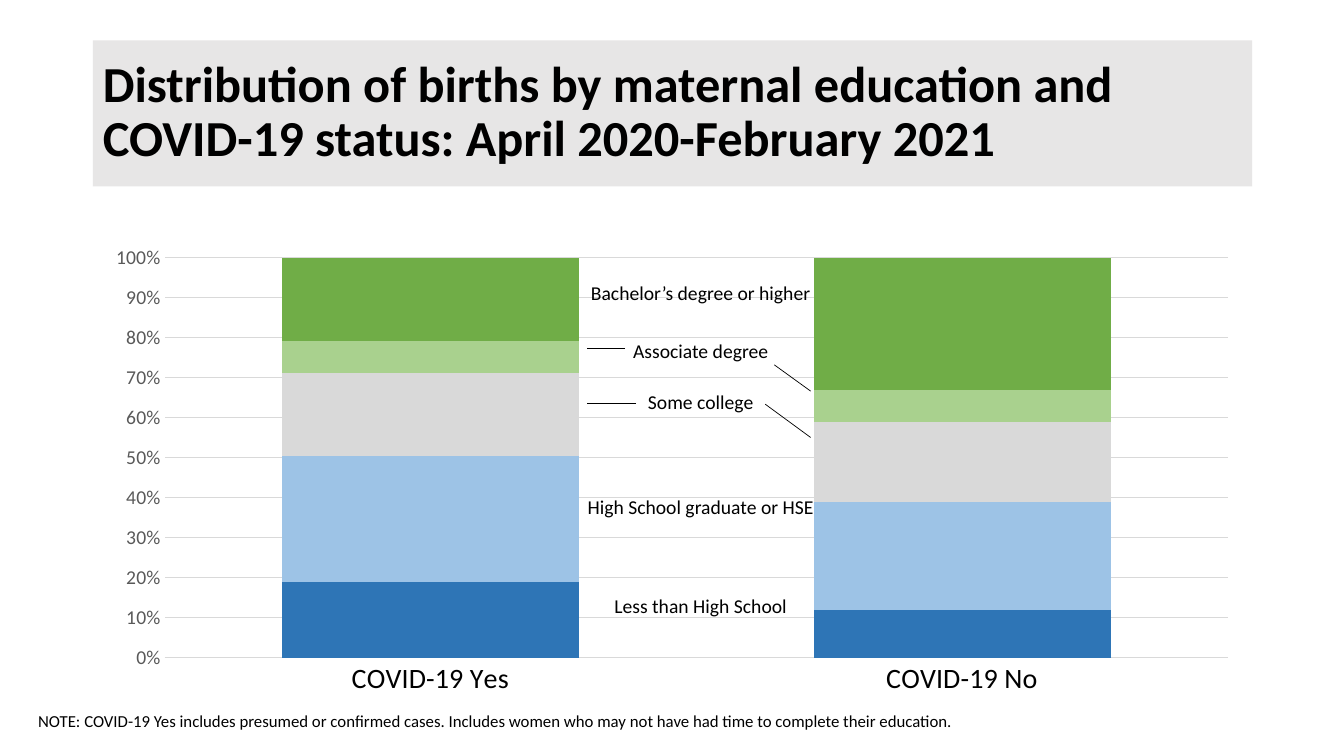
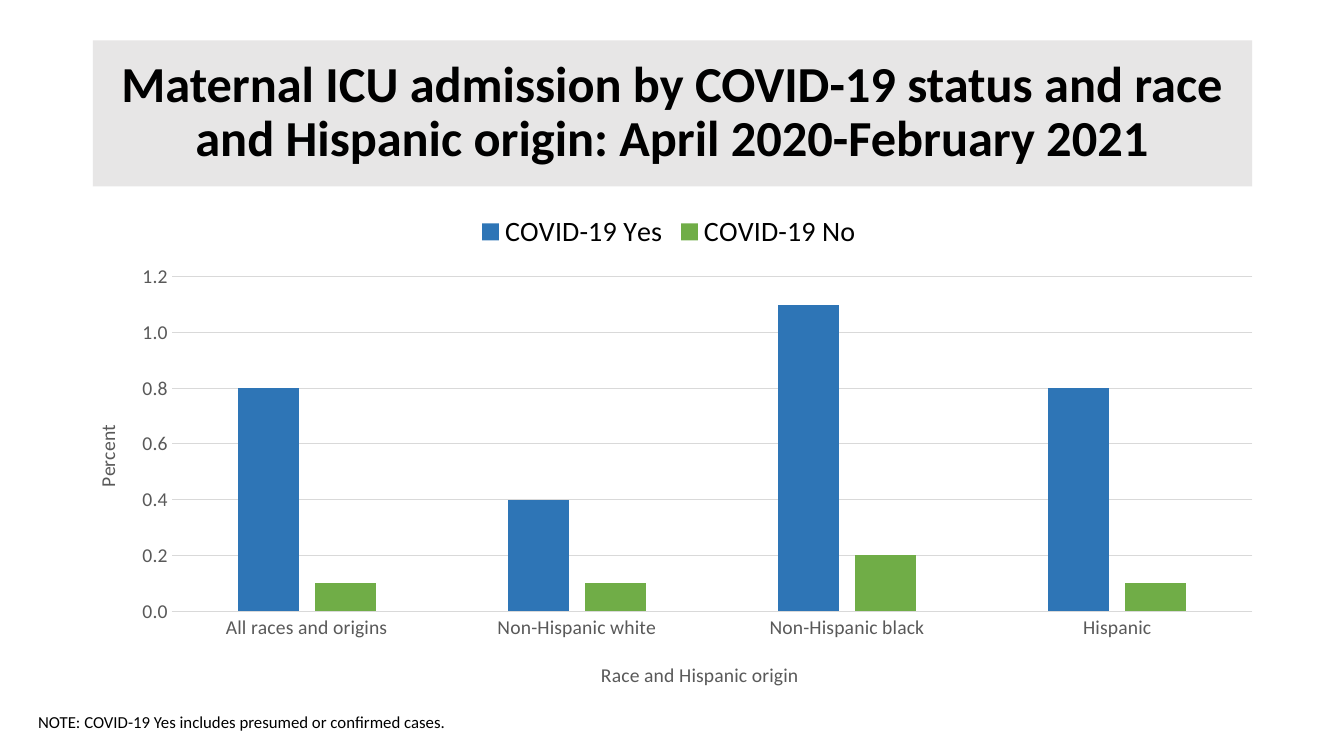
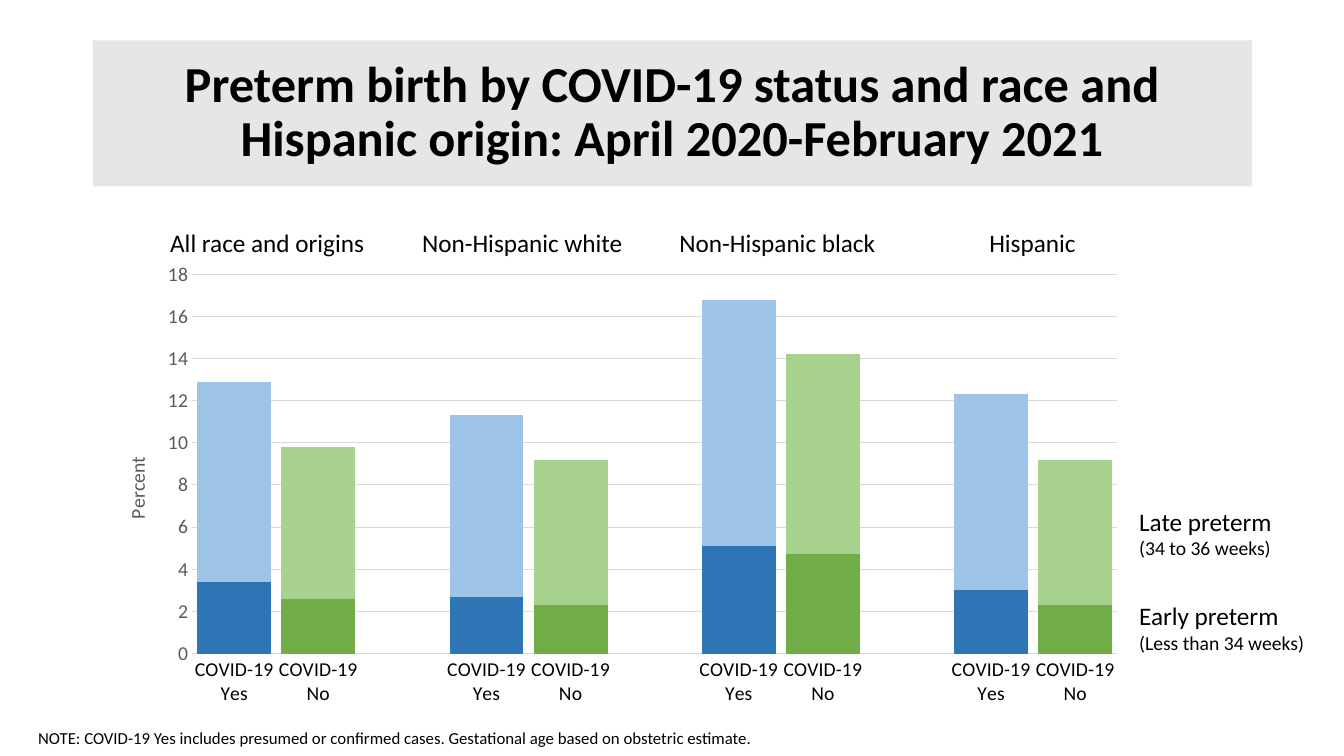
from lxml import etree
from pptx import Presentation
from pptx.chart.data import CategoryChartData
from pptx.dml.color import RGBColor
from pptx.enum.chart import XL_CHART_TYPE as ChartType, XL_LEGEND_POSITION as LegendPos
from pptx.enum.chart import XL_TICK_MARK as TickMark
from pptx.enum.shapes import MSO_CONNECTOR
from pptx.enum.text import MSO_ANCHOR, MSO_AUTO_SIZE as AutoSize, PP_ALIGN
from pptx.oxml import parse_xml
from pptx.oxml.ns import nsdecls, qn
from pptx.util import Inches, Pt

FONT = "Calibri"
BLACK = RGBColor(0x00, 0x00, 0x00)
AXIS_GREY = RGBColor(0x59, 0x59, 0x59)
RULE_GREY = RGBColor(0xD9, 0xD9, 0xD9)
BAND_GREY = RGBColor(0xE7, 0xE6, 0xE6)
BLUE = RGBColor(0x2E, 0x75, 0xB6)
LIGHT_BLUE = RGBColor(0x9D, 0xC3, 0xE6)
GREEN = RGBColor(0x70, 0xAD, 0x47)
LIGHT_GREEN = RGBColor(0xA9, 0xD1, 0x8E)

TITLE_ONLY = 5
LINE_HEIGHT = 1.22  # of the font size


def set_font(font, size, color=BLACK, bold=False):
    font.name = FONT
    font.size = Pt(size)
    font.bold = bold
    font.color.rgb = color


# Shared slide parts
def add_slide(prs, heading, align=PP_ALIGN.CENTER):
    slide = prs.slides.add_slide(prs.slide_layouts[TITLE_ONLY])
    title = slide.shapes.title
    title.left, title.top = Inches(0.92), Inches(0.4)
    title.width, title.height = Inches(11.5), Inches(1.45)
    title.fill.solid()
    title.fill.fore_color.rgb = BAND_GREY
    frame = title.text_frame
    frame.text = heading
    frame.auto_size = AutoSize.NONE
    frame.vertical_anchor = MSO_ANCHOR.MIDDLE
    paragraph = frame.paragraphs[0]
    paragraph.alignment = align
    paragraph.line_spacing = 0.9
    set_font(paragraph.runs[0].font, 36, bold=True)
    return slide


def add_text(shapes, left, top, width, height, lines, align=PP_ALIGN.LEFT):
    """Each line is (text, size, space before in points)."""
    box = shapes.add_textbox(Inches(left), Inches(top), Inches(width), Inches(height))
    frame = box.text_frame
    frame.word_wrap = True
    frame.auto_size = AutoSize.SHAPE_TO_FIT_TEXT
    for index, (text, size, gap) in enumerate(lines):
        paragraph = frame.paragraphs[0] if index == 0 else frame.add_paragraph()
        paragraph.text = text
        paragraph.alignment = align
        paragraph.space_before = Pt(gap)
        set_font(paragraph.runs[0].font, size)


def add_note(slide, text, top):
    add_text(slide.shapes, 0.28, top, 11.3, 0.3, [(text, 12, 0)])


def add_leader(slide, x1, y1, x2, y2):
    leader = slide.shapes.add_connector(
        MSO_CONNECTOR.STRAIGHT, Inches(x1), Inches(y1), Inches(x2), Inches(y2))
    leader.line.color.rgb = BLACK
    leader.line.width = Pt(0.5)
    etree.SubElement(leader._element.spPr, qn("a:effectLst"))


# Charts
def manual_layout(x, y, size=None):
    """Layout in fractions of the chart; a size marks the inner plot area."""
    parts = [("xMode", "edge"), ("yMode", "edge"), ("x", x), ("y", y)]
    if size:
        parts = [("layoutTarget", "inner")] + parts + [("w", size[0]), ("h", size[1])]
    body = "".join(f'<c:{tag} val="{value}"/>' for tag, value in parts)
    return parse_xml(f"<c:layout {nsdecls('c')}><c:manualLayout>{body}"
                     "</c:manualLayout></c:layout>")


def add_chart(slide, kind, box, categories, series, gap, overlap, plot_box):
    """Series are (name, values, colours); the colours repeat over the points."""
    data = CategoryChartData()
    data.categories = categories
    for name, values, _ in series:
        data.add_series(name, values)
    chart = slide.shapes.add_chart(kind, *map(Inches, box), data).chart
    chart.has_title = False
    chart.has_legend = False
    set_font(chart.font, 14)

    plot = chart.plots[0]
    plot.gap_width, plot.overlap = gap, overlap
    plot.vary_by_categories = False
    for bars, (_, values, colors) in zip(plot.series, series):
        bars.invert_if_negative = False
        bars.format.fill.solid()
        bars.format.fill.fore_color.rgb = colors[0]
        for index, value in enumerate(values):
            color = colors[index % len(colors)]
            if value is not None and color != colors[0]:
                fill = bars.points[index].format.fill
                fill.solid()
                fill.fore_color.rgb = color

    plot_area = chart._chartSpace.chart.plotArea
    for old in plot_area.findall(qn("c:layout")):
        plot_area.remove(old)
    plot_area.insert(0, manual_layout(*plot_box[:2], plot_box[2:]))
    return chart


def style_axes(chart, number_format, category_size=14, category_color=BLACK,
               maximum=None, step=None):
    category, value = chart.category_axis, chart.value_axis
    for axis in (category, value):
        axis.major_tick_mark = axis.minor_tick_mark = TickMark.NONE
    set_font(category.tick_labels.font, category_size, category_color)
    set_font(value.tick_labels.font, 14, AXIS_GREY)
    value.tick_labels.number_format = number_format
    value.tick_labels.number_format_is_linked = False
    value.format.line.fill.background()
    value.has_major_gridlines = True
    for line in (category.format.line, value.major_gridlines.format.line):
        line.color.rgb = RULE_GREY
        line.width = Pt(0.75)
    if maximum:
        value.minimum_scale, value.maximum_scale = 0, maximum
        value.major_unit = step


def title_axis(axis, text, x, y):
    axis.has_title = True
    title = axis.axis_title
    title.text_frame.text = text
    set_font(title.text_frame.paragraphs[0].runs[0].font, 14, AXIS_GREY)
    element = title._element
    for old in element.findall(qn("c:layout")):
        element.remove(old)
    element.find(qn("c:tx")).addnext(manual_layout(x, y))


# Slides
def education_slide(prs):
    slide = add_slide(prs, "Distribution of births by maternal education and "
                      "COVID-19 status: April 2020-February 2021", PP_ALIGN.LEFT)
    shares = [((19, 12), BLUE), ((32, 27), LIGHT_BLUE), ((21, 20), RULE_GREY),
              ((8, 8), LIGHT_GREEN), ((21, 33), GREEN)]
    series = [(f"Series {number}", values, [color])
              for number, (values, color) in enumerate(shares, 1)]
    chart = add_chart(slide, ChartType.COLUMN_STACKED_100, (0.92, 2.34, 11.5, 4.66),
                      ["COVID-19 Yes", "COVID-19 No"], series, 79, 100,
                      (0.062, 0.047, 0.917, 0.851))
    style_axes(chart, "0%", category_size=20)

    # Band labels between the columns; gaps count points of line size
    labels = [("Bachelor’s degree or higher", 0), ("Associate degree", 20),
              ("Some college", 16), ("High School graduate or HSE", 48),
              ("Less than High School", 44)]
    add_text(slide.shapes, 5.61, 2.74, 2.68, 3.43,
             [(text, 14, gap * LINE_HEIGHT) for text, gap in labels], PP_ALIGN.CENTER)
    add_note(slide, "NOTE: COVID-19 Yes includes presumed or confirmed cases. "
             "Includes women who may not have had time to complete their education.", 7)
    for ends in ((7.68, 3.62, 8.04, 3.88), (7.59, 4.01, 8.04, 4.34),
                 (6.2, 3.46, 5.82, 3.46), (6.31, 4, 5.82, 4)):
        add_leader(slide, *ends)


def icu_slide(prs):
    slide = add_slide(prs, "Maternal ICU admission by COVID-19 status and race "
                      "and Hispanic origin: April 2020-February 2021")
    chart = add_chart(
        slide, ChartType.COLUMN_CLUSTERED, (0.62, 2, 12.03, 4.97),
        ["All races and origins", "Non-Hispanic white", "Non-Hispanic black", "Hispanic"],
        [("COVID-19 Yes", (0.8, 0.4, 1.1, 0.8), [BLUE]),
         ("COVID-19 No", (0.1, 0.1, 0.2, 0.1), [GREEN])],
        219, -27, (0.09, 0.15, 0.891, 0.668))
    style_axes(chart, "#,##0.0", category_color=AXIS_GREY, maximum=1.2, step=0.2)
    title_axis(chart.category_axis, "Race and Hispanic origin", 0.441, 0.911)
    title_axis(chart.value_axis, "Percent", 0.023, 0.438)
    chart.has_legend = True
    chart.legend.position = LegendPos.TOP
    chart.legend.include_in_layout = False
    set_font(chart.legend.font, 20)
    add_note(slide, "NOTE: COVID-19 Yes includes presumed or confirmed cases.", 7.01)


def preterm_slide(prs):
    slide = add_slide(prs, "Preterm birth by COVID-19 status and race and "
                      "Hispanic origin: April 2020-February 2021")
    # Group headings above the column pairs
    headings = slide.shapes.add_group_shape().shapes
    for index, text in enumerate(("All race and origins", "Non-Hispanic white",
                                  "Non-Hispanic black", "Hispanic")):
        add_text(headings, 1.45 + 2.53 * index, 2.21, 2.4, 0.4,
                 [(text, 18, 0)], PP_ALIGN.CENTER)

    # Column pairs with an empty slot between them
    categories = (["COVID-19 Yes", "COVID-19 No", ""] * 4)[:-1]
    early = (3.4, 2.6, None, 2.7, 2.3, None, 5.1, 4.7, None, 3, 2.3)
    late = (9.5, 7.2, None, 8.6, 6.9, None, 11.7, 9.5, None, 9.3, 6.9)
    chart = add_chart(
        slide, ChartType.COLUMN_STACKED, (0.92, 2.51, 10.38, 4.59), categories,
        [("Series 1", early, [BLUE, GREEN, BLUE]),
         ("Series 2", late, [LIGHT_BLUE, LIGHT_GREEN, LIGHT_BLUE])],
        14, 100, (0.095, 0.046, 0.884, 0.82))
    style_axes(chart, "0", maximum=18, step=2)
    title_axis(chart.value_axis, "Percent", 0.026, 0.432)

    # Key beside the last column
    key = slide.shapes.add_group_shape().shapes
    for top, name, weeks in ((4.97, "Late preterm", "(34 to 36 weeks)"),
                             (5.91, "Early preterm", "(Less than 34 weeks)")):
        add_text(key, 11.2, top, 1.9, 0.64, [(name, 18, 0), (weeks, 14, 0)])
    add_note(slide, "NOTE: COVID-19 Yes includes presumed or confirmed cases. "
             "Gestational age based on obstetric estimate.", 7.17)


def main():
    prs = Presentation()
    prs.slide_width, prs.slide_height = Inches(13.33), Inches(7.5)
    education_slide(prs)
    icu_slide(prs)
    preterm_slide(prs)
    prs.save("out.pptx")


if __name__ == "__main__":
    main()
